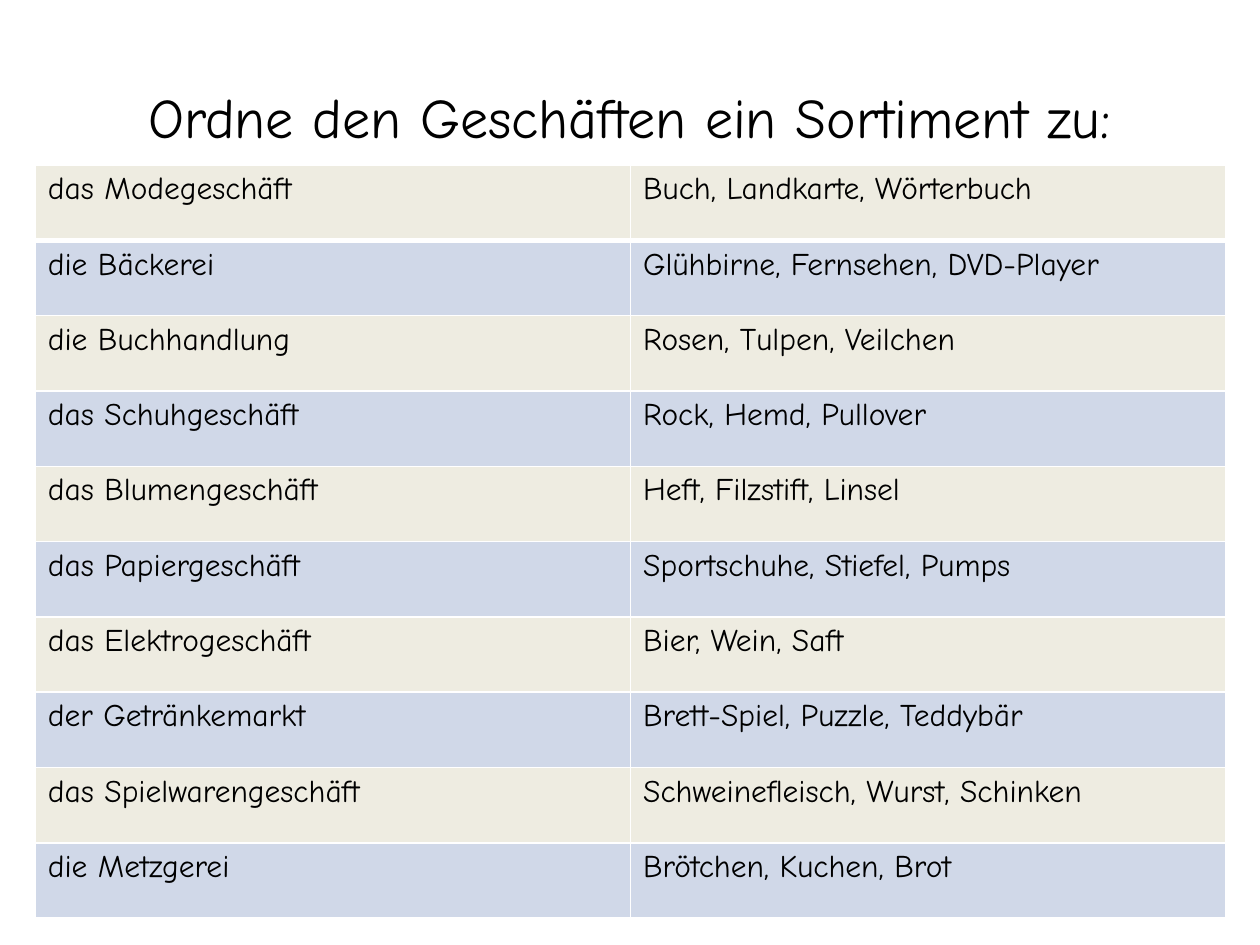
from lxml import etree
from pptx import Presentation
from pptx.dml.color import RGBColor
from pptx.enum.text import MSO_ANCHOR, PP_ALIGN
from pptx.oxml.ns import qn
from pptx.util import Inches, Pt

FONT = "Comic Neue"
BLACK, WHITE = "000000", "FFFFFF"
BANDS = ("EEECE1", "D0D8E8")
TITLE = "Ordne den Geschäften ein Sortiment zu:"
ROWS = [
    ("das Modegeschäft", "Buch, Landkarte, Wörterbuch"),
    ("die Bäckerei", "Glühbirne, Fernsehen, DVD-Player"),
    ("die Buchhandlung", "Rosen, Tulpen, Veilchen"),
    ("das Schuhgeschäft", "Rock, Hemd, Pullover"),
    ("das Blumengeschäft", "Heft, Filzstift, Linsel"),
    ("das Papiergeschäft", "Sportschuhe, Stiefel, Pumps"),
    ("das Elektrogeschäft", "Bier, Wein, Saft"),
    ("der Getränkemarkt", "Brett-Spiel, Puzzle, Teddybär"),
    ("das Spielwarengeschäft", "Schweinefleisch, Wurst, Schinken"),
    ("die Metzgerei", "Brötchen, Kuchen, Brot"),
]
LEFT, TOP, WIDTH, HEIGHT = 0.28, 1.31, 9.45, 5.98


def rgb(color):
    return RGBColor.from_string(color)


def write(tf, text, size):
    tf.text = text
    font = tf.paragraphs[0].runs[0].font
    font.name, font.size, font.bold = FONT, Pt(size), False
    font.color.rgb = rgb(BLACK)


def add_borders(cell, top, bottom):
    """Give the cell white borders, 1 pt at the sides."""
    tc_pr = cell._tc.get_or_add_tcPr()
    for side, width in (("L", 1), ("R", 1), ("T", top), ("B", bottom)):
        ln = etree.SubElement(tc_pr, qn(f"a:ln{side}"), w=str(Pt(width)))
        fill = etree.SubElement(ln, qn("a:solidFill"))
        etree.SubElement(fill, qn("a:srgbClr"), val=WHITE)


prs = Presentation()
prs.slide_width, prs.slide_height = Inches(10), Inches(7.5)
slide = prs.slides.add_slide(prs.slide_layouts[6])

title = slide.shapes.add_textbox(Inches(0.5), Inches(0.3), Inches(9), Inches(1.25))
tf = title.text_frame
tf.word_wrap = True
tf.vertical_anchor = MSO_ANCHOR.MIDDLE
write(tf, TITLE, 32)
tf.paragraphs[0].alignment = PP_ALIGN.CENTER

table = slide.shapes.add_table(len(ROWS), 2, Inches(LEFT), Inches(TOP),
                               Inches(WIDTH), Inches(HEIGHT)).table
table.first_row = table.horz_banding = False
for i, texts in enumerate(ROWS):
    for j, text in enumerate(texts):
        cell = table.cell(i, j)
        write(cell.text_frame, text, 18)
        add_borders(cell, top=3 if i == 1 else 1, bottom=3 if i == 0 else 1)
        cell.fill.solid()
        cell.fill.fore_color.rgb = rgb(BANDS[i % 2])

prs.save("out.pptx")
